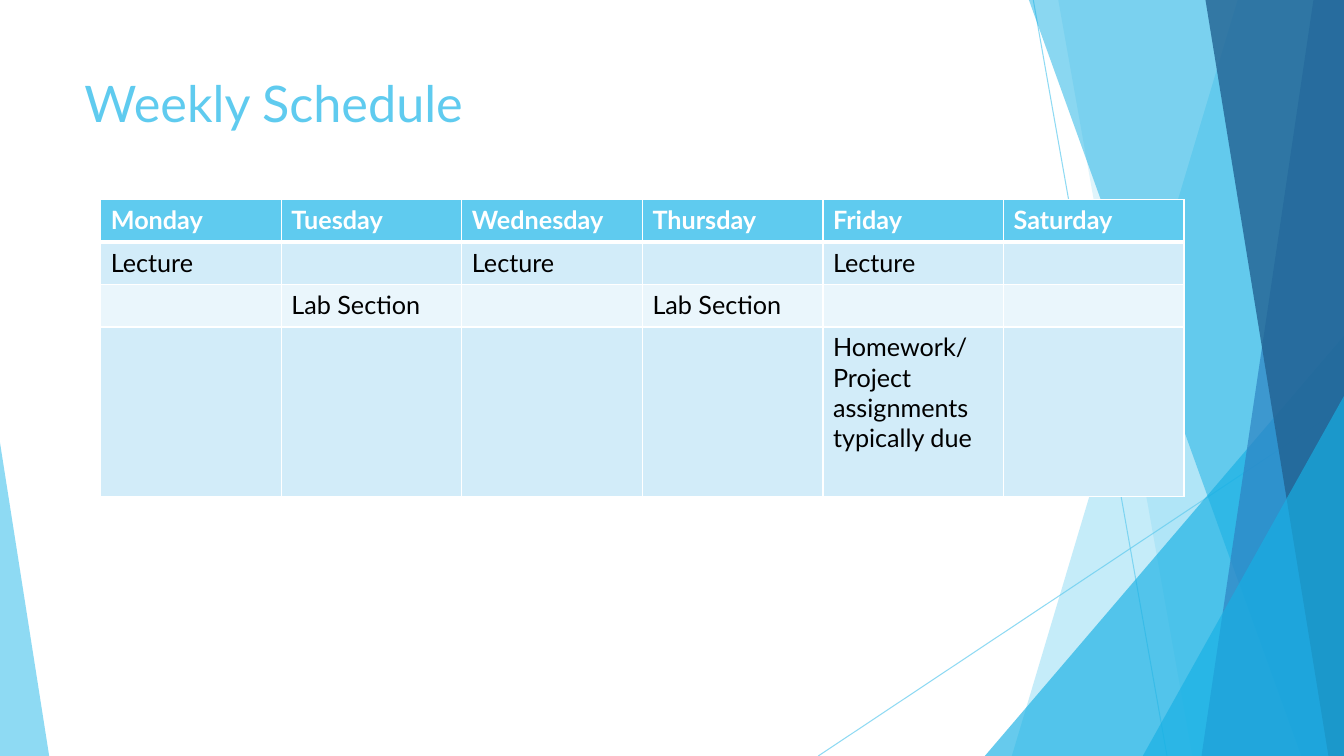
from lxml import etree
from pptx import Presentation, util as u
from pptx.dml.color import RGBColor
from pptx.enum import shapes, text
from pptx.oxml import ns

WHITE = RGBColor(0xFF, 0xFF, 0xFF)
BLACK = RGBColor(0, 0, 0)
SKY = RGBColor(0x5F, 0xCB, 0xEF)
CYAN = RGBColor(0x17, 0xB0, 0xE4)
BLUE = RGBColor(0x2E, 0x83, 0xC3)
NAVY = RGBColor(0x22, 0x62, 0x92)
BAND_DARK = RGBColor(0xD2, 0xEC, 0xF9)
BAND_LIGHT = RGBColor(0xEA, 0xF6, 0xFC)

WIDTH, HEIGHT = 33.87, 19.05
HEADER = ["Monday", "Tuesday", "Wednesday", "Thursday", "Friday", "Saturday"]
ROWS = [
    HEADER,
    ["Lecture", "", "Lecture", "", "Lecture", ""],
    ["", "Lab Section", "", "Lab Section", "", ""],
    ["", "", "", "", "Homework/ Project assignments typically due", ""],
]
ROW_HEIGHTS = [1.07, 1.07, 1.07, 4.27]
ROW_FILLS = [SKY, BAND_DARK, BAND_LIGHT, BAND_DARK]


class Deck:
    font = "Lato"

    def __init__(self):
        self.prs = Presentation()
        self.prs.slide_width = u.Cm(WIDTH)
        self.prs.slide_height = u.Cm(HEIGHT)
        self.s = self.prs.slides.add_slide(self.prs.slide_layouts[6])

    def set_alpha(self, parent, percent):
        for color in parent.iter(ns.qn("a:srgbClr")):
            etree.SubElement(color, ns.qn("a:alpha"), val=str(percent * 1000))

    def paint(self, sp, color, alpha):
        sp.shadow.inherit = False
        sp.fill.solid()
        sp.fill.fore_color.rgb = color
        sp.line.fill.background()
        self.set_alpha(sp.element.spPr, alpha)

    def line(self, x1, y1, x2, y2):
        c = self.s.shapes.add_connector(
            shapes.MSO_CONNECTOR.STRAIGHT, u.Cm(x1), u.Cm(y1), u.Cm(x2), u.Cm(y2))
        c.line.color.rgb = SKY
        c.line.width = u.Pt(0.75)
        self.set_alpha(c.element.spPr, 70)
        etree.SubElement(c.element.spPr, ns.qn("a:effectLst"))

    def panel(self, top_x, bottom_x, color, alpha):
        fb = self.s.shapes.build_freeform(u.Cm(top_x), 0)
        corners = [(WIDTH, 0), (WIDTH, HEIGHT), (bottom_x, HEIGHT)]
        fb.add_line_segments([(u.Cm(x), u.Cm(y)) for x, y in corners])
        self.paint(fb.convert_to_shape(), color, alpha)

    def triangle(self, x, y, width, apex, color, alpha):
        sp = self.s.shapes.add_shape(
            shapes.MSO_SHAPE.ISOSCELES_TRIANGLE,
            u.Cm(x), u.Cm(y), u.Cm(width), u.Cm(HEIGHT - y))
        sp.adjustments[0] = apex
        self.paint(sp, color, alpha)

    def set_text(self, tf, words, size, color, bold=False):
        p = tf.paragraphs[0]
        if words:
            p.add_run().text = words
        p.font.name = self.font
        p.font.size = u.Pt(size)
        p.font.color.rgb = color
        p.font.bold = bold

    def title(self, words, x, y, width, height):
        tf = self.s.shapes.add_textbox(
            u.Cm(x), u.Cm(y), u.Cm(width), u.Cm(height)).text_frame
        tf.word_wrap = True
        tf.vertical_anchor = text.MSO_ANCHOR.TOP
        self.set_text(tf, words, 36, SKY)

    def border(self, cell, side, width):
        ln = etree.SubElement(
            cell._tc.get_or_add_tcPr(), ns.qn(f"a:ln{side}"), w=str(u.Pt(width)))
        fill = etree.SubElement(ln, ns.qn("a:solidFill"))
        etree.SubElement(fill, ns.qn("a:srgbClr"), val=str(WHITE))

    def table(self, x, y, col_width):
        table = self.s.shapes.add_table(
            len(ROWS), len(HEADER), u.Cm(x), u.Cm(y),
            u.Cm(col_width * len(HEADER)), u.Cm(sum(ROW_HEIGHTS))).table
        for col in table.columns:
            col.width = u.Cm(col_width)
        for i, (words, height) in enumerate(zip(ROWS, ROW_HEIGHTS)):
            table.rows[i].height = u.Cm(height)
            for j, word in enumerate(words):
                cell = table.cell(i, j)
                for side in "LRTB":
                    thick = (i, side) in [(0, "B"), (1, "T")]
                    self.border(cell, side, 3 if thick else 1)
                cell.fill.solid()
                cell.fill.fore_color.rgb = ROW_FILLS[i]
                self.set_text(cell.text_frame, word, 18, BLACK if i else WHITE, i == 0)


def main():
    deck = Deck()
    deck.line(26.04, 0, 29.41, HEIGHT)
    deck.line(WIDTH, 10.24, 20.62, HEIGHT)
    deck.panel(31.19, 25.5, SKY, 36)
    deck.panel(26.67, 30.05, SKY, 20)
    deck.triangle(24.82, 8.46, 9.05, 1, CYAN, 66)
    deck.panel(25.93, 32.79, CYAN, 50)
    deck.panel(33.1, 30.28, BLUE, 70)
    deck.panel(30.38, 33.48, NAVY, 80)
    deck.triangle(28.8, 9.98, 5.07, 1, CYAN, 66)
    deck.triangle(0, 11.15, 1.24, 0, SKY, 70)
    deck.title("Weekly Schedule", 1.88, 1.7, 23.88, 3.66)
    deck.table(2.54, 5.03, 4.55)
    deck.prs.save("out.pptx")


if __name__ == "__main__":
    main()
